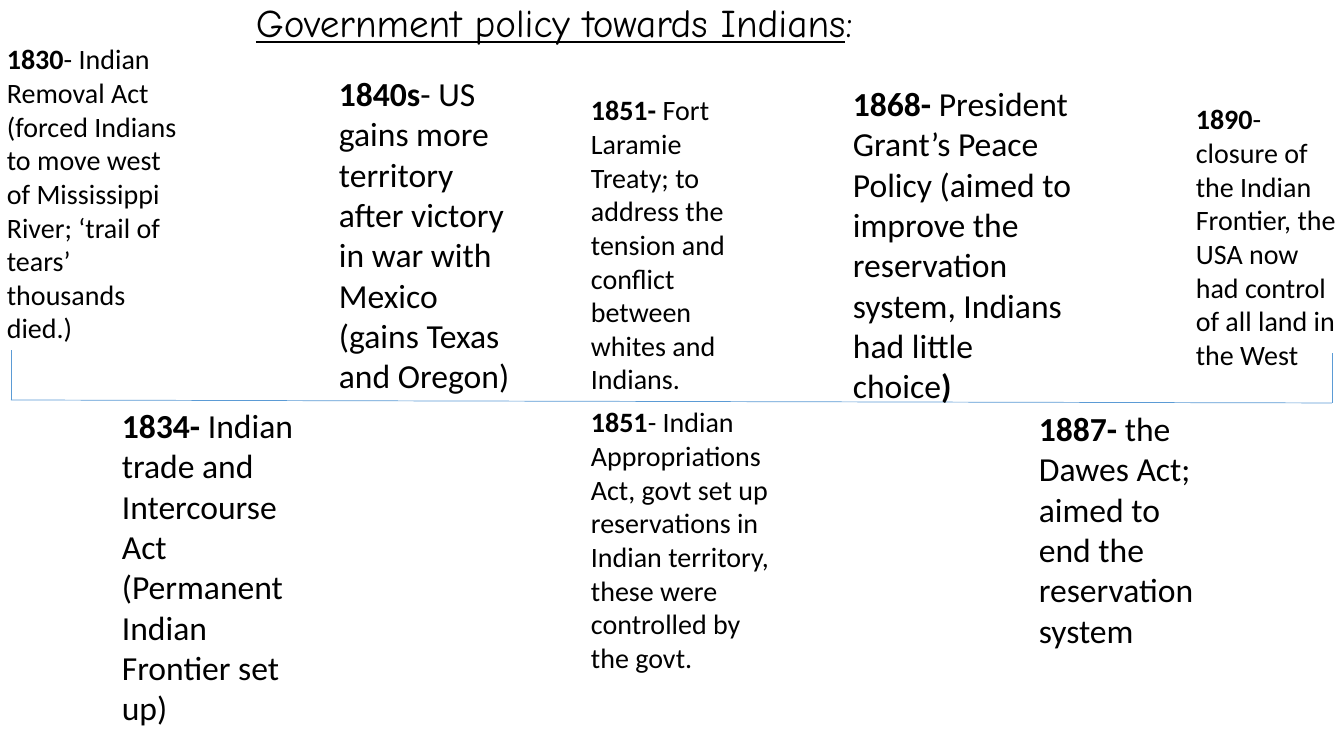
import pptx
import pptx.util
import pptx.dml.color
import pptx.enum.shapes
import pptx.enum.text
from lxml import etree

PX = 914400 / 100.8
BLACK = pptx.dml.color.RGBColor(0, 0, 0)
BLUE = pptx.dml.color.RGBColor(0x5B, 0x9B, 0xD5)

# Content: box (left, top, width, height in px), text size, (bold, text) runs
TITLE_BOX = (246, -7, 1074, 57)
TITLE = "Government policy towards Indians"
EVENTS = [
    ((-3, 37, 192, 316), 20, [
        (True, "1830"),
        (False, "- Indian Removal Act (forced Indians to move west of Mississippi "
                "River; ‘trail of tears’ thousands died.)")]),
    ((112, 400, 194, 336), 24, [
        (True, "1834- "),
        (False, "Indian trade and Intercourse Act (Permanent Indian Frontier set up)")]),
    ((329, 68, 203, 336), 24, [
        (True, "1840s"),
        (False, "- US gains more territory after victory in war with Mexico "
                "(gains Texas and Oregon)")]),
    ((581, 88, 159, 316), 20, [
        (True, "1851-"),
        (False, " Fort Laramie Treaty; to address the tension and conflict "
                "between whites and Indians.")]),
    ((581, 400, 201, 281), 20, [
        (True, "1851"),
        (False, "- Indian Appropriations Act, govt set up reservations in Indian "
                "territory, these were controlled by the govt.")]),
    ((843, 78, 241, 336), 24, [
        (True, "1868- "),
        (False, "President Grant’s Peace Policy (aimed to improve the reservation "
                "system, Indians had little choice"),
        (True, ")")]),
    ((1029, 403, 190, 254), 24, [
        (True, "1887-"),
        (False, " the Dawes Act; aimed to end the reservation system")]),
    ((1186, 97, 165, 281), 20, [
        (True, "1890"),
        (False, "- closure of the Indian Frontier, the USA now had control of all "
                "land in the West")]),
]
AXIS_START, AXIS_END = (11, 400), (1332, 403)
TICK = 50


def px(*lengths):
    return [round(n * PX) for n in lengths]


def add_line(s, start, end):
    line = s.shapes.add_connector(
        pptx.enum.shapes.MSO_CONNECTOR.STRAIGHT, *px(*start, *end))
    line.line.color.rgb = BLUE
    line.line.width = pptx.util.Pt(0.5)
    etree.SubElement(line._element.spPr, pptx.oxml.ns.qn("a:effectLst"))


def add_paragraph(s, box, size, font):
    tf = s.shapes.add_textbox(*px(*box)).text_frame
    tf.word_wrap = True
    tf.auto_size = pptx.enum.text.MSO_AUTO_SIZE.SHAPE_TO_FIT_TEXT
    p = tf.paragraphs[0]
    p.font.size = pptx.util.Pt(size)
    p.font.name = font
    p.font.color.rgb = BLACK
    return p


def add_run(p, text):
    r = p.add_run()
    r.text = text
    return r


prs = pptx.Presentation()
prs.slide_width, prs.slide_height = px(1344, 756)
s = prs.slides.add_slide(prs.slide_layouts[6])

# Timeline with a tick at each end
add_line(s, AXIS_START, AXIS_END)
for x, y in (AXIS_START, AXIS_END):
    add_line(s, (x, y), (x, y - TICK))

# Title
p = add_paragraph(s, TITLE_BOX, 28, "Comic Neue")
add_run(p, TITLE).font.underline = True
add_run(p, ":")

# Events
for box, size, runs in EVENTS:
    p = add_paragraph(s, box, size, "Calibri")
    for bold, text in runs:
        add_run(p, text).font.bold = bold

prs.save("out.pptx")
